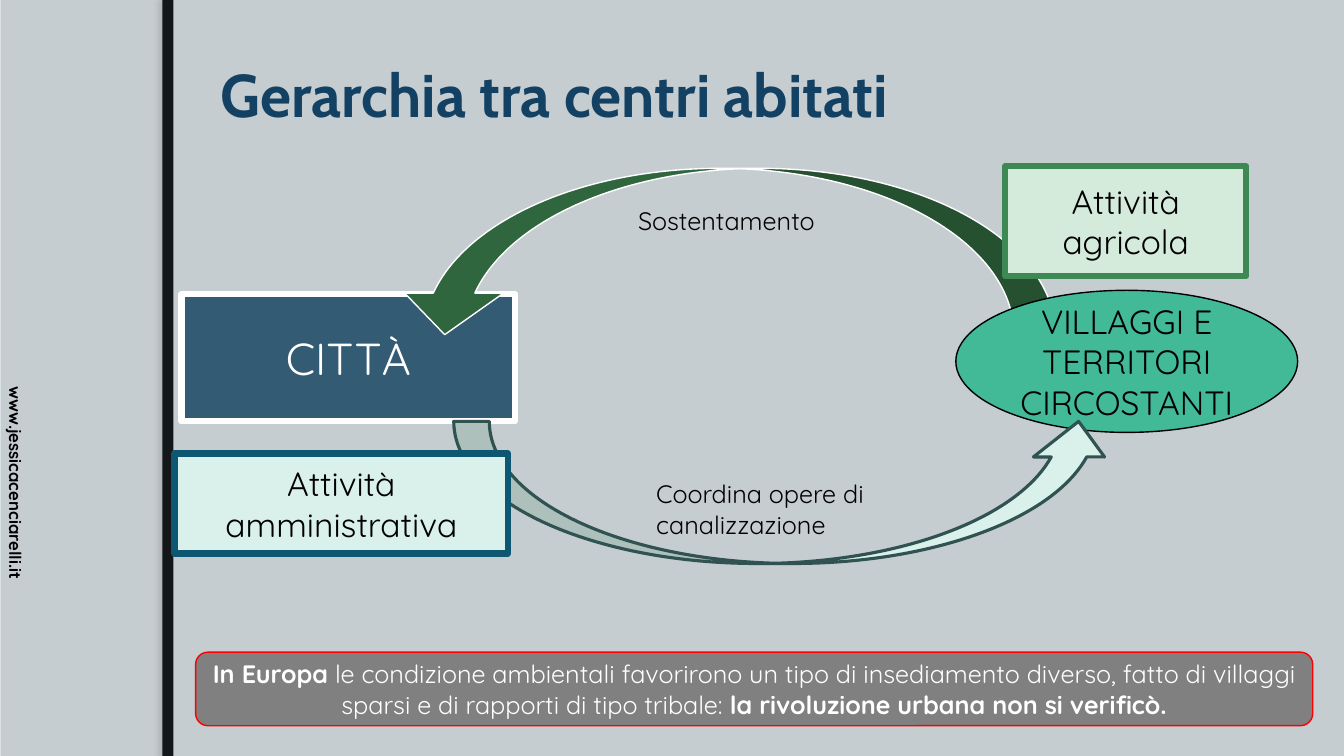
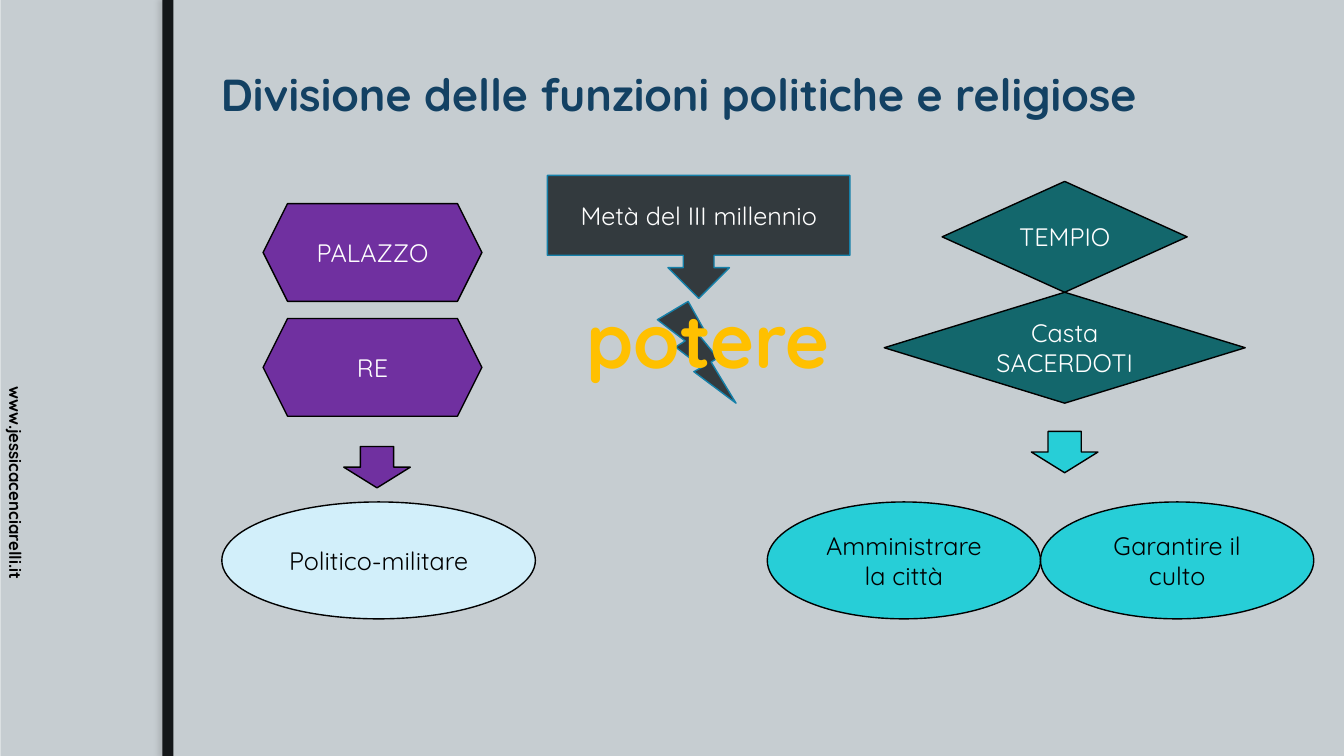
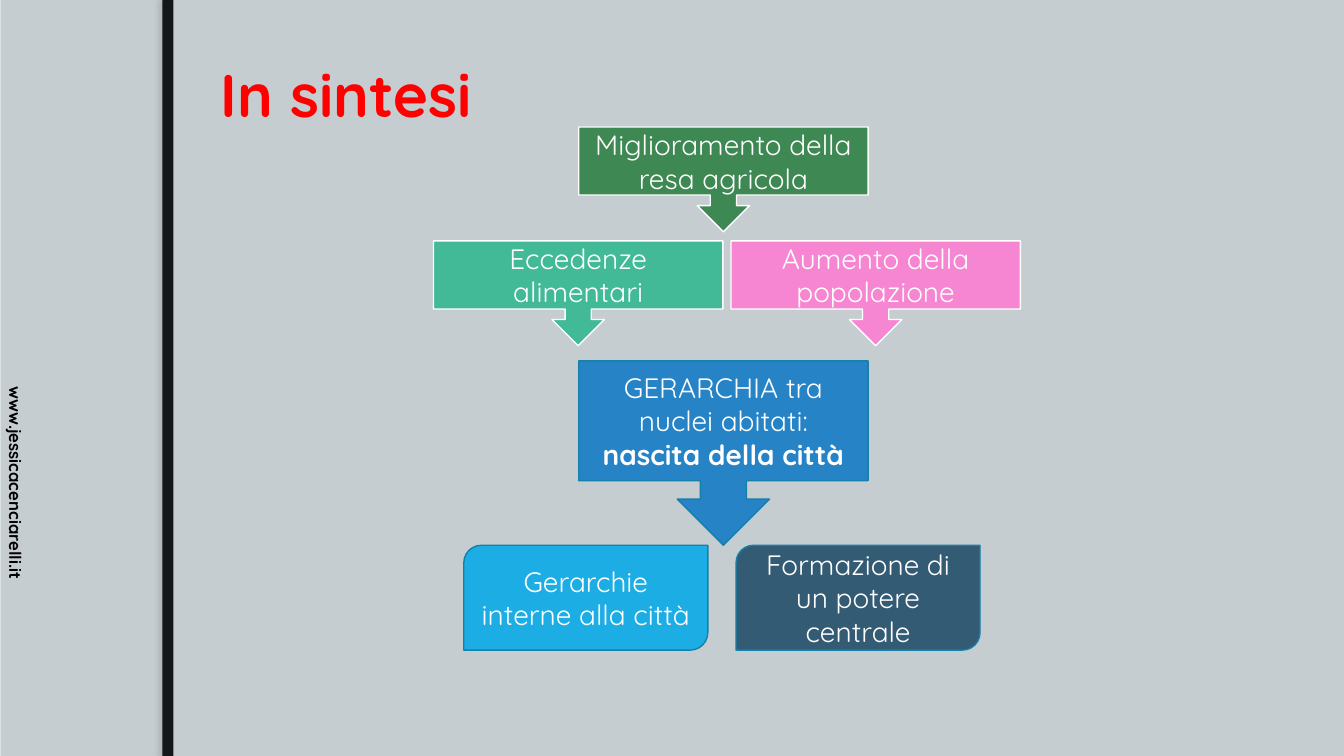
from dataclasses import dataclass

from lxml import etree
from pptx import Presentation
from pptx.dml.color import RGBColor
from pptx.enum.shapes import MSO_SHAPE
from pptx.enum.text import MSO_ANCHOR, MSO_AUTO_SIZE, PP_ALIGN
from pptx.oxml.ns import qn
from pptx.util import Inches, Pt

RECTANGLE = MSO_SHAPE.RECTANGLE
ROUNDED = MSO_SHAPE.ROUNDED_RECTANGLE
DIAGONAL_ROUNDED = MSO_SHAPE.ROUND_2_DIAG_RECTANGLE
ELLIPSE = MSO_SHAPE.OVAL
HEXAGON = MSO_SHAPE.HEXAGON
DIAMOND = MSO_SHAPE.DIAMOND
BOLT = MSO_SHAPE.LIGHTNING_BOLT
DOWN_ARROW = MSO_SHAPE.DOWN_ARROW
CURVED_ARROW = MSO_SHAPE.CURVED_DOWN_ARROW
CALLOUT = MSO_SHAPE.DOWN_ARROW_CALLOUT
LEFT, CENTER = PP_ALIGN.LEFT, PP_ALIGN.CENTER
MIDDLE, TOP = MSO_ANCHOR.MIDDLE, MSO_ANCHOR.TOP
NO_AUTOFIT = MSO_AUTO_SIZE.NONE
TITLE_ONLY_LAYOUT = 5


@dataclass(frozen=True)
class Theme:
    body_font: str = "Quicksand"
    heading_font: str = "Cabin"

    edge: str = "DFE3E5"
    page: str = "C6CDD1"
    band: str = "141719"
    band_shadow: str = "6F7172"
    black: str = "000000"
    white: str = "FFFFFF"
    title: str = "134163"
    red: str = "FF0000"
    title_outline: str = "264457"
    steel: str = "335B74"
    petrol: str = "0E5772"
    accent_line: str = "1580A9"
    blue: str = "2683C6"
    sky: str = "1CADE4"
    ice: str = "D2EFFA"
    cyan: str = "27CED7"
    teal: str = "13676C"
    jade: str = "42BA97"
    mint: str = "D9F1EA"
    mint_line: str = "305250"
    forest: str = "2F663E"
    green: str = "3E8853"
    pale_green: str = "D4EBDB"
    charcoal: str = "333A3E"
    gray: str = "808080"
    purple: str = "7030A0"
    pink: str = "F686D1"
    gold: str = "FFC000"

    address_size: float = 12
    text_size: float = 18
    summary_size: float = 20
    label_size: float = 24
    large_size: float = 32
    title_size: float = 43
    power_size: float = 54

    thin: float = 1
    medium: float = 2.25
    thick: float = 4.5


THEME = Theme()


def color(value):
    return RGBColor.from_string(value)


def inches(box):
    return [Inches(value) for value in box]


def add_color_fill(parent, value):
    """Append a solid fill to an XML element and return its colour element."""
    fill = etree.SubElement(parent, qn("a:solidFill"))
    return etree.SubElement(fill, qn("a:srgbClr"), val=value)


def write_text(frame, text, size, text_color, bold=False, align=CENTER,
               anchor=MIDDLE, font=THEME.body_font, outline=None, wrap=True):
    """Fill a frame with one paragraph; text is a string or (text, bold) runs."""
    frame.word_wrap = wrap
    frame.auto_size = NO_AUTOFIT
    frame.vertical_anchor = anchor
    paragraph = frame.paragraphs[0]
    paragraph.alignment = align
    for content, is_bold in [(text, bold)] if isinstance(text, str) else text:
        run = paragraph.add_run()
        run.text = content
        run.font.name = font
        run.font.size = Pt(size)
        run.font.bold = is_bold
        run.font.color.rgb = color(text_color)
        if outline:
            line = etree.Element(qn("a:ln"), w=str(Pt(THEME.thin)))
            add_color_fill(line, outline)
            run.font._element.insert(0, line)


def add_node(slide, preset, box, fill, line=None, width=THEME.thin, text=None,
             size=THEME.text_size, text_color=THEME.white):
    shape = slide.shapes.add_shape(preset, *inches(box))
    shape.shadow.inherit = False
    shape.fill.solid()
    shape.fill.fore_color.rgb = color(fill)
    if line:
        shape.line.color.rgb = color(line)
        shape.line.width = Pt(width)
    else:
        shape.line.fill.background()
    if text:
        write_text(shape.text_frame, text, size, text_color)
    return shape


def add_label(slide, box, text, size=THEME.text_size, text_color=THEME.black,
              align=LEFT, **style):
    label = slide.shapes.add_textbox(*inches(box))
    write_text(label.text_frame, text, size, text_color, align=align, anchor=TOP, **style)
    return label


def flip_horizontally(shape):
    shape.element.spPr.xfrm.set("flipH", "1")


def add_band_shadow(band):
    effects = band.element.spPr.find(qn("a:effectLst"))
    shadow = etree.SubElement(
        effects, qn("a:outerShdw"), blurRad=str(Pt(3)), dist=str(Pt(3)),
        dir="10800000", algn="r", rotWithShape="0")
    shadow_color = etree.SubElement(shadow, qn("a:srgbClr"), val=THEME.band_shadow)
    etree.SubElement(shadow_color, qn("a:alpha"), val="25000")


def prepare_layout(layout, slide):
    """Give the layout its title area, page, band and address, drawn by way of a slide."""
    layout.background.fill.solid()
    layout.background.fill.fore_color.rgb = color(THEME.edge)
    for placeholder in list(layout.placeholders):
        if placeholder.placeholder_format.idx == 0:
            (placeholder.left, placeholder.top,
             placeholder.width, placeholder.height) = inches((2.09, 0.3, 10.93, 1.25))
        else:
            placeholder.element.getparent().remove(placeholder.element)

    page = add_node(slide, RECTANGLE, (0.01, 0, 13.32, 7.5), THEME.page)
    band = add_node(slide, RECTANGLE, (1.61, 0, 0.11, 7.5), THEME.band)
    add_band_shadow(band)
    address = add_label(slide, (-1.41, 4.64, 3.13, 0.3), "www.jessicacenciarelli.it",
                        THEME.address_size, align=CENTER, bold=True)
    address.rotation = 90
    for position, shape in enumerate((page, band, address), start=2):
        layout.shapes.element.insert(position, shape.element)


def set_title(slide, text, size=THEME.title_size, text_color=THEME.title, **style):
    write_text(slide.shapes.title.text_frame, text, size, text_color,
               bold=True, align=LEFT, **style)


def build_hierarchy(slide):
    set_title(slide, "Gerarchia tra centri abitati", font=THEME.heading_font)
    add_node(slide, RECTANGLE, (1.8, 2.92, 3.31, 1.26), THEME.steel, THEME.white,
             THEME.thick, "CITTÀ", THEME.large_size)

    support_arrow = add_node(slide, CURVED_ARROW, (3.92, 1.67, 6.55, 1.65),
                             THEME.forest, THEME.white)
    support_arrow.adjustments[1] = 0.595
    flip_horizontally(support_arrow)

    add_node(slide, ELLIPSE, (9.48, 2.88, 3.39, 1.41), THEME.jade, THEME.black,
             text="VILLAGGI E TERRITORI CIRCOSTANTI", size=THEME.label_size,
             text_color=THEME.black)

    works_arrow = add_node(slide, CURVED_ARROW, (4.5, 4.18, 6.55, 1.41),
                           THEME.mint, THEME.mint_line, THEME.medium)
    works_arrow.rotation = 180
    flip_horizontally(works_arrow)

    add_label(slide, (6.23, 1.99, 2.3, 0.4), "Sostentamento")
    add_label(slide, (6.41, 4.7, 2.3, 0.71), "Coordina opere di canalizzazione")

    for box, fill, line, text in (
        ((1.73, 4.5, 3.31, 0.99), THEME.mint, THEME.petrol, "Attività amministrativa"),
        ((9.97, 1.65, 2.39, 1.09), THEME.pale_green, THEME.green, "Attività agricola"),
    ):
        add_node(slide, RECTANGLE, box, fill, line, THEME.thick, text,
                 THEME.label_size, THEME.black)

    add_node(slide, ROUNDED, (1.94, 6.47, 11.08, 0.73), THEME.gray, THEME.red, text=[
        ("In Europa ", True),
        ("le condizione ambientali favorirono un tipo di insediamento diverso, "
         "fatto di villaggi sparsi e di rapporti di tipo tribale: ", False),
        ("la rivoluzione urbana non si verificò.", True),
    ])


def build_division(slide):
    set_title(slide, "Divisione delle funzioni politiche e religiose", THEME.large_size)
    add_node(slide, BOLT, (6.52, 2.99, 0.78, 1.01), THEME.charcoal, THEME.accent_line)
    add_node(slide, CALLOUT, (5.43, 1.74, 3, 1.22), THEME.charcoal, THEME.accent_line,
             text="Metà del III millennio")
    add_label(slide, (5.71, 2.86, 2.63, 1.01), "potere", THEME.power_size, THEME.gold,
              CENTER, bold=True, outline=THEME.purple, wrap=False)

    for row, text in enumerate(("PALAZZO", "RE")):
        add_node(slide, HEXAGON, (2.61, 2.02 + row * 1.14, 2.17, 0.97),
                 THEME.purple, THEME.black, text=text)

    temple_center, diamond_height = 10.56, 1.1
    for row, (text, width) in enumerate((("TEMPIO", 2.43), ("Casta SACERDOTI", 3.58))):
        box = (temple_center - width / 2, 1.8 + row * diamond_height, width, diamond_height)
        add_node(slide, DIAMOND, box, THEME.teal, THEME.black, text=text)

    for left, width, fill, text in (
        (2.2, 3.11, THEME.ice, "Politico-militare"),
        (7.61, 2.71, THEME.cyan, "Amministrare la città"),
        (10.32, 2.71, THEME.cyan, "Garantire il culto"),
    ):
        add_node(slide, ELLIPSE, (left, 4.98, width, 1.16), fill, THEME.black,
                 text=text, text_color=THEME.black)

    for left, top, fill in ((3.41, 4.43, THEME.purple), (10.23, 4.28, THEME.cyan)):
        add_node(slide, DOWN_ARROW, (left, top, 0.66, 0.41), fill, THEME.black)


def build_summary(slide):
    set_title(slide, "In sintesi", text_color=THEME.red, outline=THEME.title_outline)
    city_birth = [("GERARCHIA tra nuclei abitati: ", False), ("nascita della città", True)]
    callout_width, result_width, step_height = 2.87, 2.42, 1.04
    for left, top, height, fill, line, text in (
        (5.74, 1.26, step_height, THEME.green, THEME.white,
         "Miglioramento della resa agricola"),
        (4.3, 2.39, step_height, THEME.jade, THEME.white, "Eccedenze alimentari"),
        (7.25, 2.39, step_height, THEME.pink, THEME.white, "Aumento della popolazione"),
        (5.74, 3.58, 1.83, THEME.blue, THEME.accent_line, city_birth),
    ):
        add_node(slide, CALLOUT, (left, top, callout_width, height), fill, line,
                 text=text, size=THEME.summary_size)
    for left, fill, text in (
        (4.6, THEME.sky, "Gerarchie interne alla città"),
        (7.3, THEME.steel, "Formazione di un potere centrale"),
    ):
        add_node(slide, DIAGONAL_ROUNDED, (left, 5.41, result_width, step_height), fill,
                 THEME.accent_line, text=text, size=THEME.summary_size)


def main():
    presentation = Presentation()
    presentation.slide_width = Inches(13.33)
    presentation.slide_height = Inches(7.5)
    layout = presentation.slide_layouts[TITLE_ONLY_LAYOUT]
    builders = (build_hierarchy, build_division, build_summary)
    slides = [presentation.slides.add_slide(layout) for _ in builders]
    prepare_layout(layout, slides[0])
    for build, slide in zip(builders, slides):
        build(slide)
    presentation.save("out.pptx")


if __name__ == "__main__":
    main()
